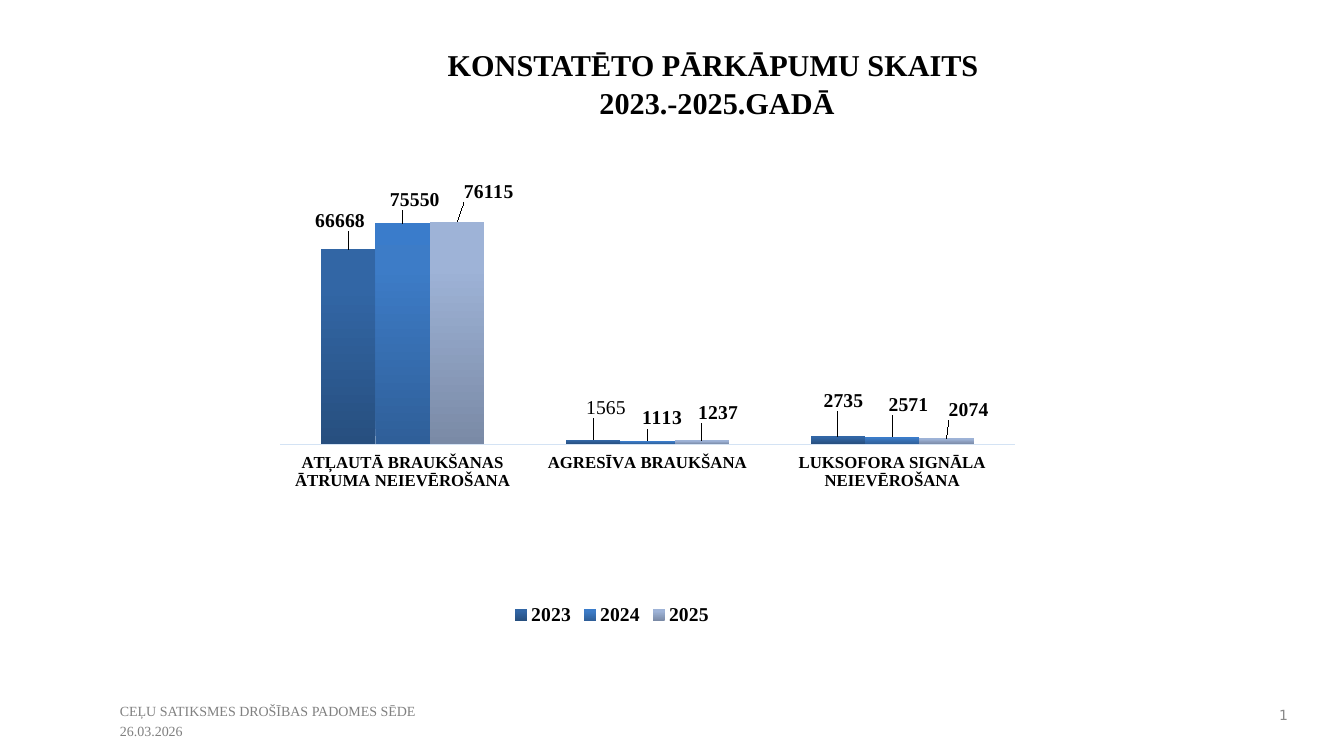
from dataclasses import dataclass

from lxml import etree
from pptx import Presentation
from pptx.chart.data import CategoryChartData
from pptx.dml.color import RGBColor
from pptx.enum.chart import XL_CHART_TYPE, XL_LEGEND_POSITION, XL_TICK_LABEL_POSITION, XL_TICK_MARK
from pptx.enum.text import MSO_ANCHOR, PP_ALIGN
from pptx.oxml import parse_xml
from pptx.oxml.ns import nsdecls, qn
from pptx.util import Pt

PX = 914400 / 100.8


def px(*lengths):
    return [round(length * PX) for length in lengths]


@dataclass(frozen=True)
class Theme:
    serif: str = "Times New Roman"
    sans: str = "DejaVu Sans"
    ink: str = "000000"
    footer: str = "808080"
    number: str = "898989"
    axis: str = "D4E3F4"
    title_size: float = 21.6
    label_size: float = 14
    category_size: float = 12
    small_size: float = 10


# Each year: counts, gradient from bar foot to top, label shifts in px
YEARS = {
    "2023": ((66668, 1565, 2735), ("274F7F", "3266A5", "3067A8"),
             ((-8, -14), (13, -17), (6, -21))),
    "2024": ((75550, 1113, 2571), ("2F5F99", "3D7CC7", "3A7CCB"),
             ((12, -9), (15, -8), (16, -17))),
    "2025": ((76115, 1237, 2074), ("7A8AA6", "9EB3D7", "9EB3D9"),
             ((32, -15), (16, -13), (22, -13))),
}
VIOLATIONS = (
    "ATĻAUTĀ BRAUKŠANAS ĀTRUMA NEIEVĒROŠANA",
    "AGRESĪVA BRAUKŠANA",
    "LUKSOFORA SIGNĀLA NEIEVĒROŠANA",
)
LIGHT_LABEL = ("2023", 1)


def manual_layout(inner=False, edge=False, **fractions):
    layout = parse_xml(f"<c:layout {nsdecls('c')}><c:manualLayout/></c:layout>")
    settings = {"layoutTarget": "inner"} if inner else {}
    if edge:
        settings.update(xMode="edge", yMode="edge")
    settings.update(fractions)
    for tag, value in settings.items():
        etree.SubElement(layout[0], qn(f"c:{tag}")).set("val", str(value))
    return layout


class SlideBuilder:
    def __init__(self, slide, theme):
        self.slide = slide
        self.theme = theme

    def style(self, font, size, color, bold=False, name=None):
        font.name = name or self.theme.serif
        font.size = Pt(size)
        font.bold = bold
        font.color.rgb = RGBColor.from_string(color)

    def title(self, text, left, top, width, height):
        title = self.slide.shapes.title
        title.left, title.top, title.width, title.height = px(left, top, width, height)
        frame = title.text_frame
        frame.text = text
        frame.vertical_anchor = MSO_ANCHOR.TOP
        heading = frame.paragraphs[0]
        heading.alignment = PP_ALIGN.CENTER
        heading.line_spacing = 1.04
        self.style(heading.font, self.theme.title_size, self.theme.ink, bold=True)

    def footer(self, lines, left, top, width, height):
        frame = self.slide.shapes.add_textbox(*px(left, top, width, height)).text_frame
        frame.word_wrap = True
        frame.text = "\n".join(lines)
        for index, line in enumerate(frame.paragraphs):
            if index:
                line.space_before = Pt(2)
            self.style(line.font, self.theme.small_size, self.theme.footer)

    def slide_number(self, number, left, top, width, height):
        frame = self.slide.shapes.add_textbox(*px(left, top, width, height)).text_frame
        frame.word_wrap = True
        frame.vertical_anchor = MSO_ANCHOR.MIDDLE
        line = frame.paragraphs[0]
        line.alignment = PP_ALIGN.RIGHT
        self.style(line.font, self.theme.small_size, self.theme.number, name=self.theme.sans)
        line._p.append(parse_xml(
            f'<a:fld {nsdecls("a")} id="{{B6F15528-21DE-4FAA-801E-634DDDAF4B2B}}" type="slidenum">'
            f'<a:rPr lang="lv-LV"/><a:t>{number}</a:t></a:fld>'))

    def column_chart(self, categories, years, left, top, width, height):
        theme = self.theme
        data = CategoryChartData()
        data.categories = categories
        for year, (counts, _, _) in years.items():
            data.add_series(year, counts)
        chart = self.slide.shapes.add_chart(
            XL_CHART_TYPE.COLUMN_CLUSTERED, *px(left, top, width, height), data).chart
        chart.has_title = False
        self.style(chart.font, theme.small_size, theme.ink)

        # Axes
        counts_axis = chart.value_axis
        counts_axis.visible = False
        counts_axis.has_major_gridlines = False
        counts_axis.minimum_scale, counts_axis.maximum_scale = 0, 80000
        violations_axis = chart.category_axis
        violations_axis.major_tick_mark = XL_TICK_MARK.NONE
        violations_axis.tick_label_position = XL_TICK_LABEL_POSITION.LOW
        violations_axis.format.line.color.rgb = RGBColor.from_string(theme.axis)
        violations_axis.format.line.width = Pt(0.75)
        self.style(violations_axis.tick_labels.font, theme.category_size, theme.ink, bold=True)

        # Legend
        chart.has_legend = True
        legend = chart.legend
        legend.position = XL_LEGEND_POSITION.BOTTOM
        legend.include_in_layout = False
        self.style(legend.font, theme.label_size, theme.ink, bold=True)
        legend._element.find(qn("c:legendPos")).addnext(
            manual_layout(edge=True, x=0.3, y=0.92))

        # Plot area and bars
        plot = chart.plots[0]
        plot.gap_width, plot.overlap = 150, 0
        plot.vary_by_categories = False
        plot_area = plot._element.getparent()
        for layout in plot_area.findall(qn("c:layout")):
            plot_area.remove(layout)
        plot_area.insert(0, manual_layout(inner=True, edge=True, x=0.02, y=0.12, w=0.9, h=0.48))
        for series in plot.series:
            _, gradient, shifts = years[series.name]
            self.gradient_fill(series, gradient)
            labels = series.data_labels
            labels.show_value = True
            self.style(labels.font, theme.label_size, theme.ink, bold=True)
            for index, (dx, dy) in enumerate(shifts):
                label = series.points[index].data_label
                self.style(label.font, theme.label_size, theme.ink,
                           bold=(series.name, index) != LIGHT_LABEL)
                label_xml = labels._element.findall(qn("c:dLbl"))[index]
                label_xml.insert(1, manual_layout(x=round(dx / width, 3), y=round(dy / height, 3)))

    def gradient_fill(self, series, colors):
        stops = "".join(
            f'<a:gs pos="{position}000"><a:srgbClr val="{color}"/></a:gs>'
            for position, color in zip((0, 80, 100), colors))
        series.format.fill.background()
        no_fill = series._element.find(qn("c:spPr")).find(qn("a:noFill"))
        no_fill.getparent().replace(no_fill, parse_xml(
            f'<a:gradFill {nsdecls("a")} rotWithShape="1"><a:gsLst>{stops}</a:gsLst>'
            '<a:lin ang="16200000" scaled="0"/></a:gradFill>'))


def main():
    presentation = Presentation()
    presentation.slide_width, presentation.slide_height = px(1344, 756)
    title_only = presentation.slide_layouts[5]
    builder = SlideBuilder(presentation.slides.add_slide(title_only), Theme())
    builder.title("KONSTATĒTO PĀRKĀPUMU SKAITS \v2023.-2025.GADĀ", 416, 40, 602, 128)
    builder.slide_number(8, 1254, 698, 44, 33)
    builder.column_chart(VIOLATIONS, YEARS, 264, 152, 816, 487)
    builder.footer(("CEĻU SATIKSMES DROŠĪBAS PADOMES SĒDE", "26.03.2026"), 110, 698, 1134, 26)
    presentation.save("out.pptx")


if __name__ == "__main__":
    main()
